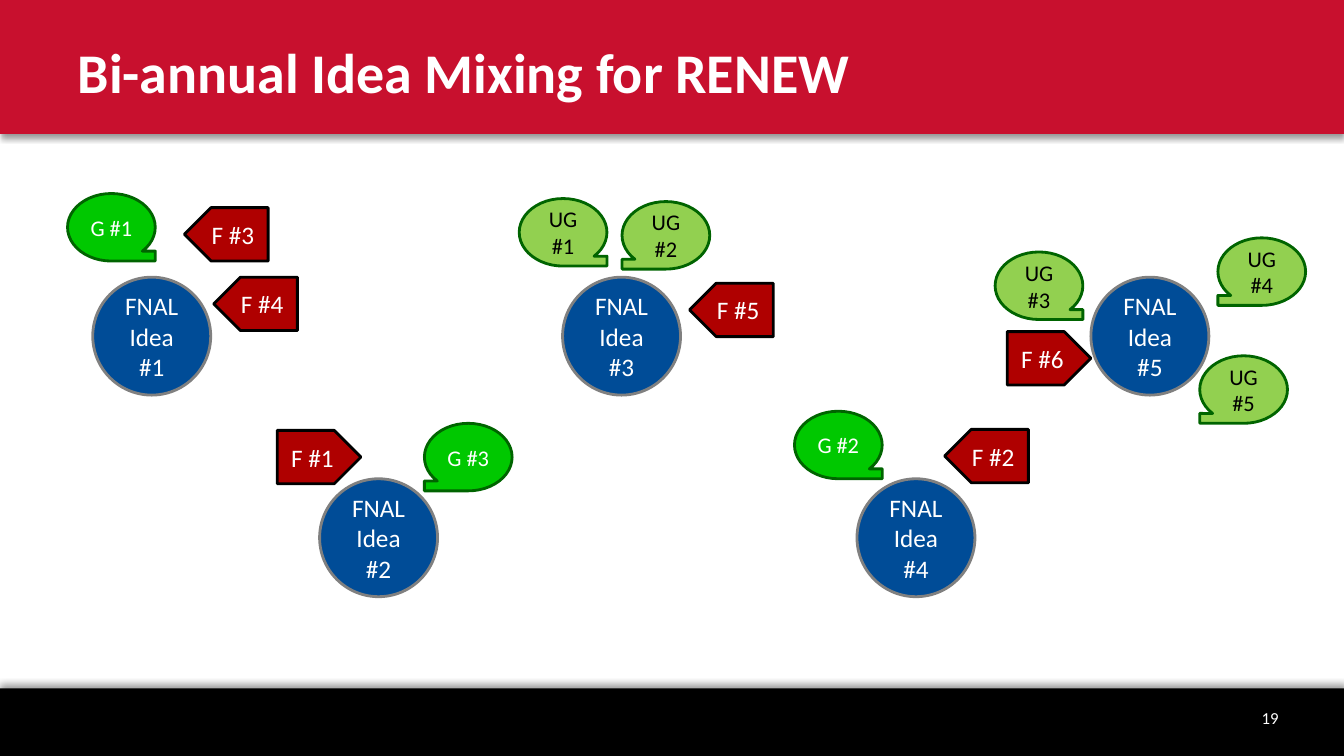
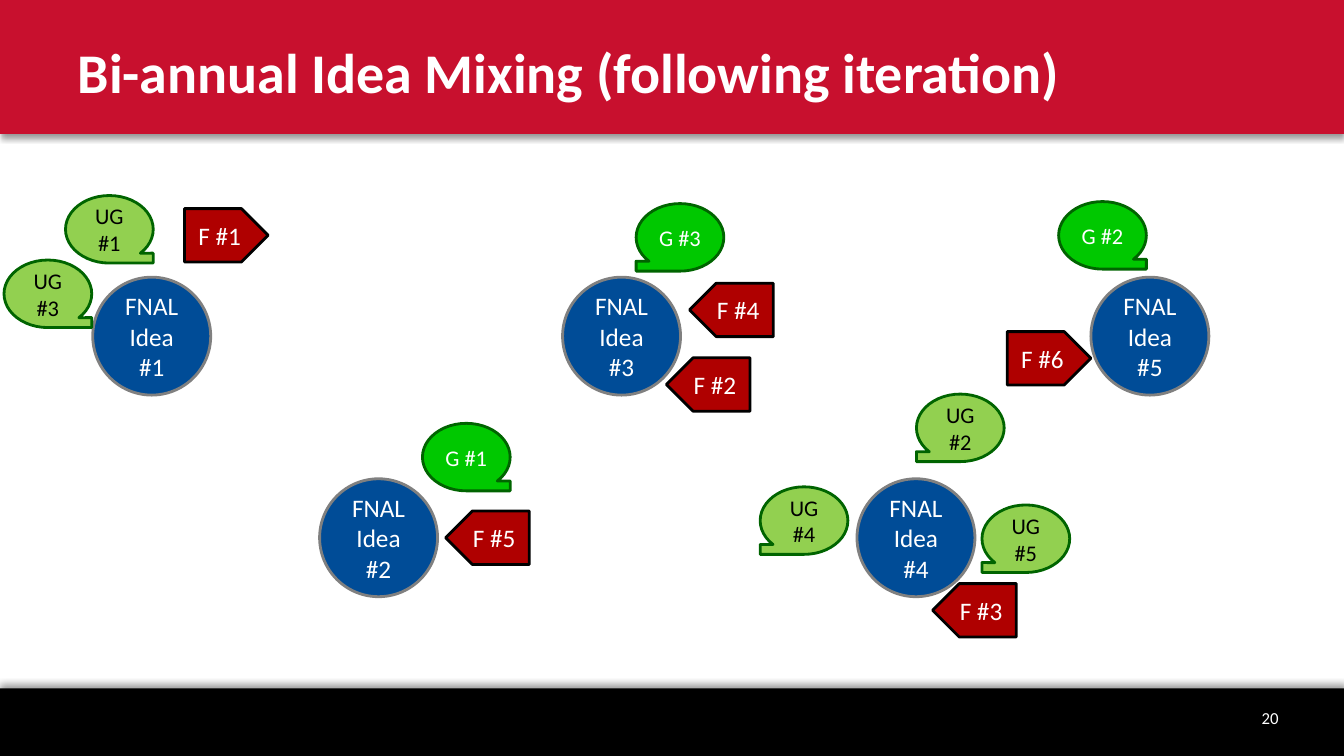
from lxml.etree import SubElement
from pptx import Presentation
from pptx.dml.color import RGBColor
from pptx.enum.shapes import MSO_SHAPE
from pptx.enum.text import MSO_ANCHOR, PP_ALIGN
from pptx.oxml.ns import qn
from pptx.util import Inches, Pt

FONT = "Calibri"
WHITE = RGBColor(0xFF, 0xFF, 0xFF)
BLACK = RGBColor(0x00, 0x00, 0x00)
BAND_RED = RGBColor(0xC8, 0x10, 0x2E)
IDEA_BLUE = RGBColor(0x00, 0x4C, 0x97)
IDEA_OUTLINE = RGBColor(0x80, 0x80, 0x80)
GRADUATE_GREEN = RGBColor(0x00, 0xC8, 0x00)
UNDERGRADUATE_GREEN = RGBColor(0x92, 0xD0, 0x50)
STUDENT_OUTLINE = RGBColor(0x00, 0x64, 0x00)
FACULTY_RED = RGBColor(0xAF, 0x00, 0x00)

SLIDE_WIDTH, SLIDE_HEIGHT = 13.33, 7.5
HEADER_HEIGHT, FOOTER_HEIGHT = 1.33, 0.67
UPPER_ROW, LOWER_ROW = 2.75, 4.75

IDEAS = [
    (0.92, UPPER_ROW),
    (3.17, LOWER_ROW),
    (5.58, UPPER_ROW),
    (8.5, LOWER_ROW),
    (10.82, UPPER_ROW),
]

FIRST_STUDENTS = [
    ("G #1", 0.67, 1.92, False),
    ("G #3", 4.21, 4.2, True),
    ("UG #1", 5.15, 1.97, False),
    ("G #2", 7.88, 4.08, False),
    ("UG #2", 6.17, 2, True),
    ("UG #3", 9.87, 2.5, False),
    ("UG #4", 12.08, 2.36, True),
    ("UG #5", 11.9, 3.53, True),
]
FIRST_FACULTY = [
    ("F #1", 2.75, 4.27, False),
    ("F #2", 9.37, 4.26, True),
    ("F #3", 1.83, 2.06, True),
    ("F #5", 6.84, 2.81, True),
    ("F #6", 9.99, 3.29, False),
    ("F #4", 2.12, 2.75, True),
]
NEXT_STUDENTS = [
    ("G #1", 4.19, 4.2, False),
    ("G #3", 6.31, 2.02, True),
    ("UG #1", 0.65, 1.94, False),
    ("G #2", 10.5, 2, False),
    ("UG #2", 9.09, 3.91, True),
    ("UG #3", 0.04, 2.58, False),
    ("UG #4", 7.54, 4.83, True),
    ("UG #5", 9.74, 5.01, True),
]
NEXT_FACULTY = [
    ("F #1", 1.83, 2.07, False),
    ("F #2", 6.61, 3.55, True),
    ("F #3", 9.25, 5.79, True),
    ("F #5", 4.42, 5.07, True),
    ("F #6", 9.99, 3.29, False),
    ("F #4", 6.84, 2.81, True),
]


def style_text(paragraph, size, color, alignment, bold=False):
    paragraph.alignment = alignment
    paragraph.font.name = FONT
    paragraph.font.size = Pt(size)
    paragraph.font.bold = bold
    paragraph.font.color.rgb = color


def add_plain_shape(slide, kind, left, top, width, height, fill):
    shape = slide.shapes.add_shape(
        kind, Inches(left), Inches(top), Inches(width), Inches(height)
    )
    shape.shadow.inherit = False
    shape.fill.solid()
    shape.fill.fore_color.rgb = fill
    return shape


def add_label_shape(slide, kind, box, text, fill, outline, size, color=WHITE, flipped=False):
    shape = add_plain_shape(slide, kind, *box, fill)
    shape.line.color.rgb = outline
    shape.line.width = Pt(2)
    if flipped:
        shape._element.spPr.xfrm.set("flipH", "1")
    frame = shape.text_frame
    frame.word_wrap = True
    frame.vertical_anchor = MSO_ANCHOR.MIDDLE
    frame.margin_left = frame.margin_right = Inches(0.08)
    frame.text = text
    style_text(frame.paragraphs[0], size, color, PP_ALIGN.CENTER)


def add_idea(slide, number, left, top):
    add_label_shape(slide, MSO_SHAPE.OVAL, (left, top, 1.17, 1.17),
                    f"FNAL Idea #{number}", IDEA_BLUE, IDEA_OUTLINE, 18)


def add_student(slide, name, left, top, flipped):
    fill, color = (UNDERGRADUATE_GREEN, BLACK) if name.startswith("UG") else (GRADUATE_GREEN, WHITE)
    add_label_shape(slide, MSO_SHAPE.FLOWCHART_SEQUENTIAL_ACCESS_STORAGE, (left, top, 0.87, 0.67),
                    name, fill, STUDENT_OUTLINE, 16, color, flipped)


def add_faculty(slide, name, left, top, flipped):
    add_label_shape(slide, MSO_SHAPE.PENTAGON, (left, top, 0.83, 0.53),
                    name, FACULTY_RED, BLACK, 18, flipped=flipped)


def add_master_band(presentation, slide, shape_id, top, height, fill, shadow_degrees):
    band = add_plain_shape(slide, MSO_SHAPE.RECTANGLE, 0, top, SLIDE_WIDTH, height, fill)
    band.line.fill.background()
    effects = band._element.spPr.find(qn("a:effectLst"))
    shadow = SubElement(effects, qn("a:outerShdw"), blurRad=str(Pt(4)), dist=str(Pt(3)),
                        dir=str(shadow_degrees * 60000), rotWithShape="0")
    color = SubElement(shadow, qn("a:srgbClr"), val=str(BLACK))
    SubElement(color, qn("a:alpha"), val="40000")
    band._element.nvSpPr.cNvPr.set("id", str(shape_id))
    presentation.slide_master.element.cSld.spTree.insert(2, band._element)


def place_title(layout):
    title = layout.placeholders[0]
    title.left, title.top = Inches(0.67), Inches(0.17)
    title.width, title.height = Inches(11), Inches(1.08)
    title.text_frame.vertical_anchor = MSO_ANCHOR.MIDDLE


def add_page_number(slide, number):
    box = slide.shapes.add_textbox(Inches(10.78), Inches(6.92), Inches(2), Inches(0.4))
    frame = box.text_frame
    frame.word_wrap = True
    frame.vertical_anchor = MSO_ANCHOR.MIDDLE
    frame.text = str(number)
    style_text(frame.paragraphs[0], 12, WHITE, PP_ALIGN.RIGHT)


def add_mixing_slide(presentation, layout, title, number, students, faculty):
    slide = presentation.slides.add_slide(layout)
    slide.shapes.title.text = title
    style_text(slide.shapes.title.text_frame.paragraphs[0], 40, WHITE, PP_ALIGN.LEFT, True)
    add_page_number(slide, number)
    for idea_number, (left, top) in enumerate(IDEAS, 1):
        add_idea(slide, idea_number, left, top)
    for student in students:
        add_student(slide, *student)
    for member in faculty:
        add_faculty(slide, *member)
    return slide


def main():
    presentation = Presentation()
    presentation.slide_width = Inches(SLIDE_WIDTH)
    presentation.slide_height = Inches(SLIDE_HEIGHT)
    layout = presentation.slide_layouts.get_by_name("Title Only")
    place_title(layout)
    slide = add_mixing_slide(presentation, layout, "Bi-annual Idea Mixing for RENEW", 19,
                             FIRST_STUDENTS, FIRST_FACULTY)
    add_master_band(presentation, slide, 101, 0, HEADER_HEIGHT, BAND_RED, 90)
    add_master_band(presentation, slide, 102, SLIDE_HEIGHT - FOOTER_HEIGHT, FOOTER_HEIGHT, BLACK, 270)
    add_mixing_slide(presentation, layout, "Bi-annual Idea Mixing (following iteration)", 20,
                     NEXT_STUDENTS, NEXT_FACULTY)
    presentation.save("out.pptx")


if __name__ == "__main__":
    main()
